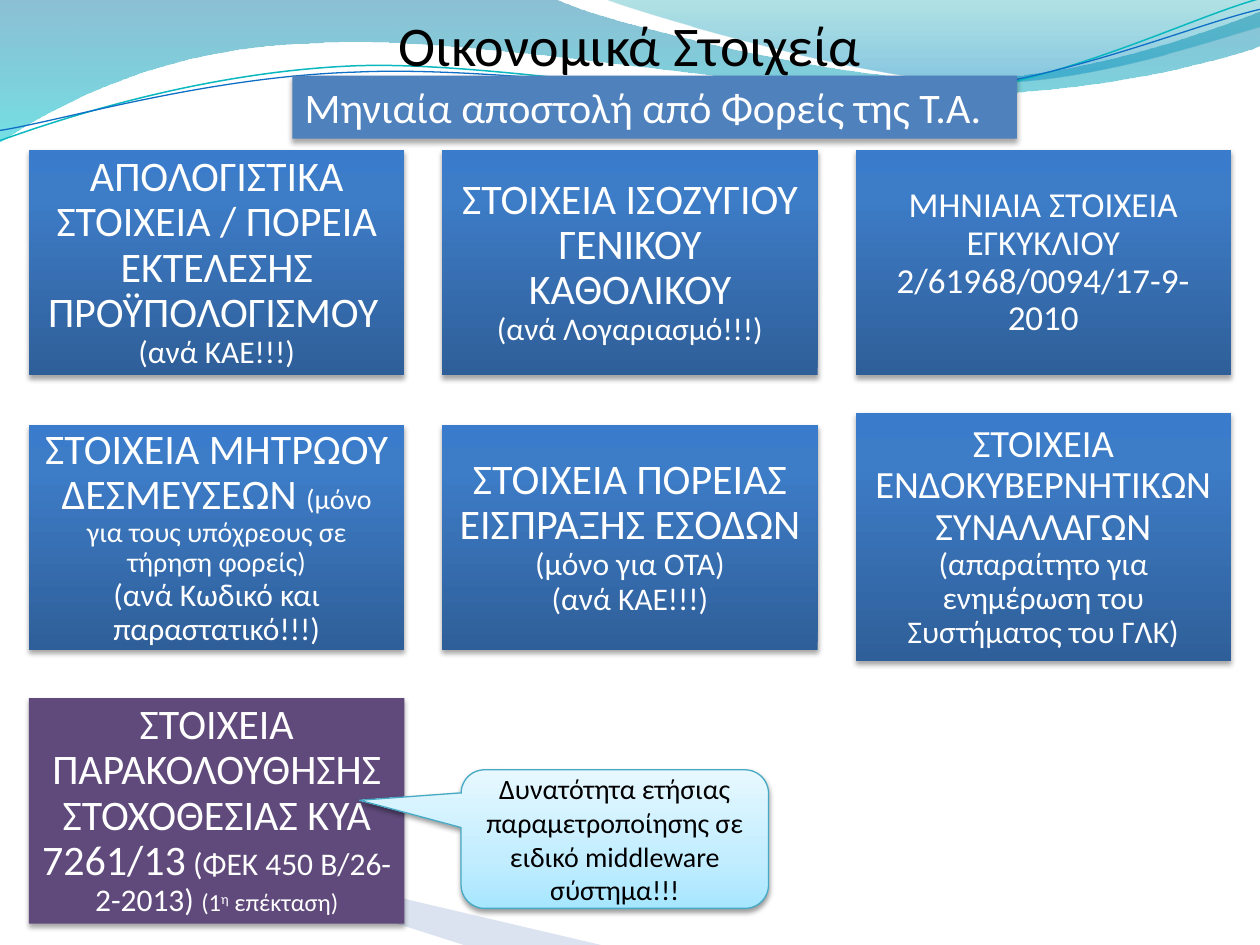
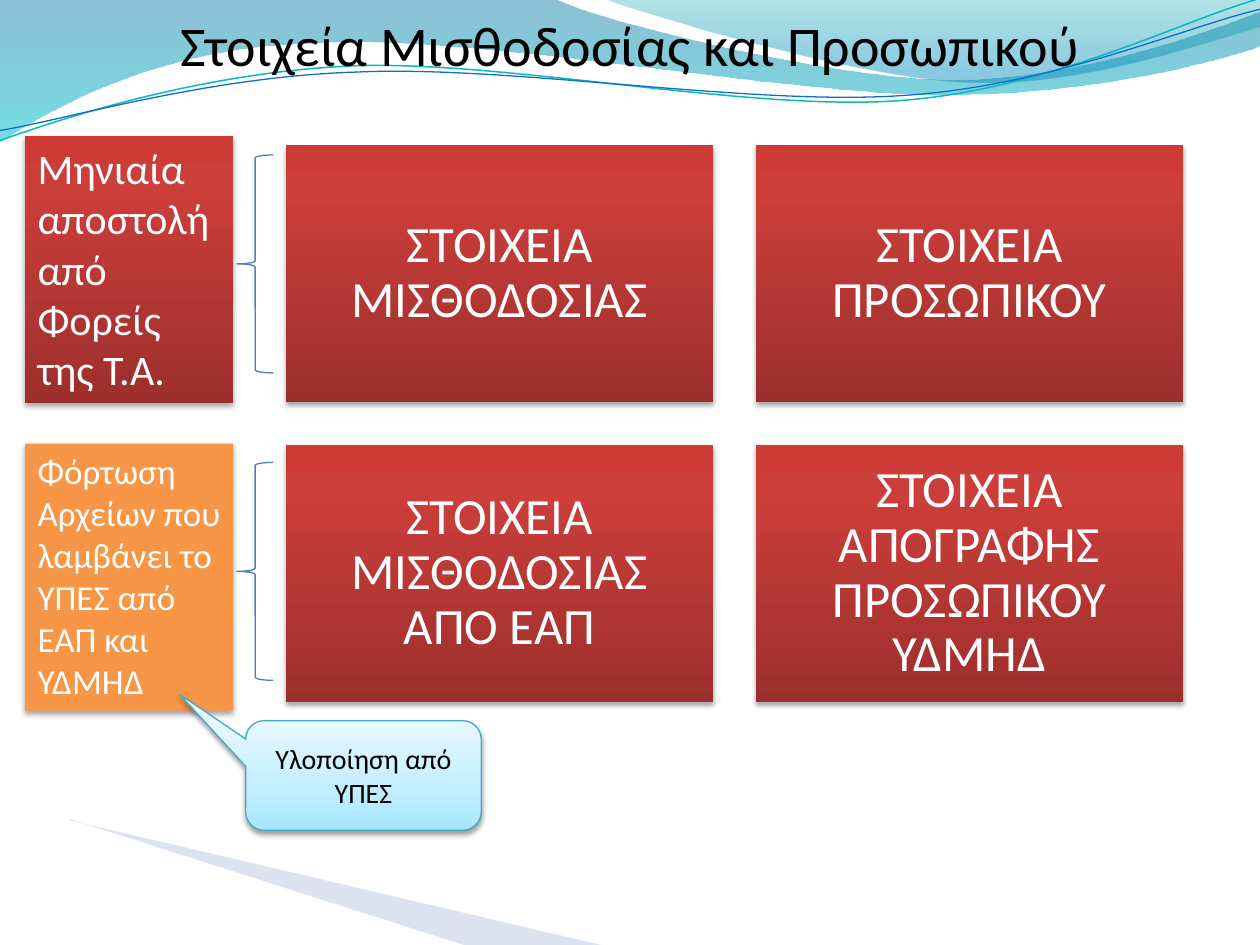
"""Build two slides on the monthly data sent by local government bodies."""
import pptx
import pptx.dml.color
import pptx.enum.shapes
import pptx.enum.text
import pptx.oxml
import pptx.oxml.ns
import pptx.util

Inches, Pt = pptx.util.Inches, pptx.util.Pt
RGB = pptx.dml.color.RGBColor.from_string
Kind = pptx.enum.shapes.MSO_SHAPE
Align = pptx.enum.text.PP_ALIGN
Anchor = pptx.enum.text.MSO_ANCHOR
NS = pptx.oxml.ns.nsdecls("a")
qn = pptx.oxml.ns.qn


class Theme:
    font = "Calibri"
    black, white = "000000", "FFFFFF"
    blue = [(0, "2F5F99", 100), (80, "3D7CC7", 100), (100, "3A7CCB", 100)]
    red = [(0, "9C2F2D", 100), (80, "CB3E3A", 100), (100, "CE3B37", 100)]
    pale = [(0, "A7E6FF", 100), (35, "C1EDFF", 100), (100, "E7F8FF", 100)]
    purple = [(0, "604A7B", 100)]
    orange = [(0, "F79646", 100)]
    flat = [(0, "4F81BD", 100)]
    deep = [(0, "0074A1", 45), (100, "00C6CF", 55)]
    teal = [(0, "00A1A9", 30), (80, "008BBF", 45)]
    wedge = [(0, "A7B9DB", 40)]
    rim, brace, aqua, navy = "46AAC5", "4B7EBC", "0AB8BF", "0F6FC6"
    title, huge, large, mid, body, note, small, tiny = 32, 29, 24, 22, 20, 18, 16, 14


def paint(shape, fill=None, turn=270, line=None, width=0.75, shade=0):
    shape.shadow.inherit = False
    props = shape._element.spPr
    if fill:
        stops = []
        for _, hue, clear in fill:
            alpha = f'<a:alpha val="{clear * 1000}"/>' if clear < 100 else ""
            stops.append(f'<a:srgbClr val="{hue}">{alpha}</a:srgbClr>')
        if len(fill) == 1:
            xml = f"<a:solidFill {NS}>{stops[0]}</a:solidFill>"
        else:
            marks = "".join(f'<a:gs pos="{stop[0] * 1000}">{hue}</a:gs>'
                            for stop, hue in zip(fill, stops))
            xml = (f'<a:gradFill {NS} rotWithShape="1"><a:gsLst>{marks}</a:gsLst>'
                   f'<a:lin ang="{turn * 60000}" scaled="0"/></a:gradFill>')
        shape.fill.solid()
        props.replace(props.find(qn("a:solidFill")), pptx.oxml.parse_xml(xml))
    else:
        shape.fill.background()
    if line:
        shape.line.color.rgb = RGB(line)
        shape.line.width = Pt(width)
    else:
        shape.line.fill.background()
    if shade:
        props.find(qn("a:effectLst")).append(pptx.oxml.parse_xml(
            f'<a:outerShdw {NS} blurRad="{Pt(3.1)}" dist="{Pt(1.8)}" dir="5400000" '
            f'rotWithShape="0"><a:srgbClr val="{Theme.black}">'
            f'<a:alpha val="{shade * 1000}"/></a:srgbClr></a:outerShdw>'))


def write(slide, spot, runs, kind=Kind.RECTANGLE, color=Theme.white, align=Align.CENTER,
          anchor=Anchor.MIDDLE, inset=(0.1, 0.05), space=None, bends=(), **look):
    area = [Inches(v) for v in spot]
    if kind is None:
        shape = slide.shapes.add_textbox(*area)
    else:
        shape = slide.shapes.add_shape(kind, *area)
        for i, bend in enumerate(bends):
            shape.adjustments[i] = bend
        paint(shape, **look)
    frame = shape.text_frame
    frame.word_wrap = True
    frame.vertical_anchor = anchor
    frame.margin_left = frame.margin_right = Inches(inset[0])
    frame.margin_top = frame.margin_bottom = Inches(inset[1])
    para = frame.paragraphs[0]
    para.alignment = align
    if space:
        para.line_spacing = space
    for text, size, *lift in runs:
        for i, part in enumerate(text.split("\n")):
            if i:
                para.add_line_break()
            if part:
                run = para.add_run()
                run.text = part
                run.font.name = Theme.font
                run.font.size = Pt(size)
                run.font.color.rgb = RGB(color)
                if lift:
                    run.font._element.set("baseline", str(lift[0] * 1000))


deck = pptx.Presentation()
deck.slide_width, deck.slide_height = Inches(10), Inches(7.5)

tilt = 357.3
waves = [
    ([(0, 0), (4.4, -0.01), (4.76, 0.17, 6.64, 0.63, 7.58, 0.63),
      (8.53, 0.63, 9.58, 0.26, 10, 0.09), (10.01, 0.36),
      (9.83, 0.44, 8.7, 0.76, 7.46, 0.75), (6.22, 0.75, 3.82, 0.28, 2.57, 0.34),
      (1.29, 0.36, 0.46, 0.83, -0.01, 1.13), (0, 0)], 0, dict(fill=Theme.deep, turn=90)),
    ([(4.79, -0.01), (5.09, 0.11, 6.82, 0.62, 7.69, 0.65),
      (8.56, 0.69, 9.61, 0.32, 10, 0.21), (10, 0), (4.79, -0.01)], 0,
     dict(fill=Theme.teal, turn=90)),
    ([(-0.02, 0.88), (0.47, 0.73, 1.58, 0.42, 2.78, 0.42), (3.96, 0.42, 5.91, 0.93, 7.12, 0.9),
      (8.32, 0.87, 9.4, 0.37, 10, 0.23)], tilt, dict(line=Theme.aqua, width=0.85)),
    ([(-0.02, 0.8), (0.46, 0.75, 1.64, 0.45, 2.83, 0.47), (4.04, 0.47, 5.96, 0.89, 7.16, 0.86),
      (8.35, 0.84, 9.42, 0.42, 10.02, 0.31)], tilt, dict(line=Theme.navy)),
    ([(0.55, 6.51), (4.77, 7.5), (3.68, 7.5), (0.55, 6.5)], 0, dict(fill=Theme.wedge)),
]
slides = []
for title in ("Οικονομικά Στοιχεία", "Στοιχεία Μισθοδοσίας και Προσωπικού"):
    slide = deck.slides.add_slide(deck.slide_layouts[6])
    for parts, spin, look in waves:
        dots = [(Inches(part[i]), Inches(part[i + 1]))
                for part in parts for i in range(0, len(part), 2)]
        pen = slide.shapes.build_freeform(*dots[0], scale=1.0)
        pen.add_line_segments(dots[1:], close=turn if (turn := "fill" in look) else False)
        wave = pen.convert_to_shape()
        legs = iter(list(wave._element.spPr.iter(qn("a:lnTo"))))
        for part in parts[1:]:
            leg = next(legs)
            if len(part) == 6:
                curve = pptx.oxml.parse_xml(f"<a:cubicBezTo {NS}/>")
                leg.addprevious(curve)
                for piece in (leg, next(legs), next(legs)):
                    curve.append(piece[0])
                    piece.getparent().remove(piece)
        wave.rotation = spin
        paint(wave, **look)
    write(slide, (0, 0, 10, 0.7), [(title, Theme.title)], kind=None, color=Theme.black)
    slides.append(slide)
money, staff = slides

cards = [
    [("ΑΠΟΛΟΓΙΣΤΙΚΑ ΣΤΟΙΧΕΙΑ / ΠΟΡΕΙΑ ΕΚΤΕΛΕΣΗΣ ΠΡΟΫΠΟΛΟΓΙΣΜΟΥ", Theme.large),
     (" \n(ανά ΚΑΕ!!!)", Theme.note)],
    [("ΣΤΟΙΧΕΙΑ ΙΣΟΖΥΓΙΟΥ ΓΕΝΙΚΟΥ ΚΑΘΟΛΙΚΟΥ\n", Theme.large),
     ("(ανά Λογαριασμό!!!)", Theme.note)],
    [("ΜΗΝΙΑΙΑ ΣΤΟΙΧΕΙΑ ΕΓΚΥΚΛΙΟΥ 2/61968/0094/17-9-2010", Theme.body)],
    [("ΣΤΟΙΧΕΙΑ ΜΗΤΡΩΟΥ ΔΕΣΜΕΥΣΕΩΝ ", Theme.large),
     ("(μόνο για τους υπόχρεους σε τήρηση φορείς)\n", Theme.small),
     ("(ανά Κωδικό και παραστατικό!!!)", Theme.note)],
    [("ΣΤΟΙΧΕΙΑ ΠΟΡΕΙΑΣ ΕΙΣΠΡΑΞΗΣ ΕΣΟΔΩΝ ", Theme.large),
     ("(μόνο για ΟΤΑ)\n(ανά ΚΑΕ!!!)", Theme.note)],
    [("ΣΤΟΙΧΕΙΑ ΕΝΔΟΚΥΒΕΡΝΗΤΙΚΩΝ ΣΥΝΑΛΛΑΓΩΝ ", Theme.mid),
     ("(απαραίτητο για ενημέρωση του Συστήματος του ΓΛΚ)", Theme.note)],
    [("ΣΤΟΙΧΕΙΑ ΠΑΡΑΚΟΛΟΥΘΗΣΗΣ ΣΤΟΧΟΘΕΣΙΑΣ ΚΥΑ 7261/13", Theme.large),
     (" (ΦΕΚ 450 Β/26-2-2013) ", Theme.note), ("(1", Theme.tiny),
     ("η", Theme.tiny, 30), (" επέκταση)", Theme.tiny)],
]
tops = (1.19, 3.37, 5.54)
for i, runs in enumerate(cards):
    row, col = divmod(i, 3)
    tall = 1.97 if i == 5 else 1.79
    pad = round(runs[0][1] / 240, 2)
    write(money, (0.23 + 3.28 * col, tops[row] - (tall - 1.79) / 2, 2.98, tall), runs,
          inset=(pad, pad), space=0.9, fill=Theme.purple if row == 2 else Theme.blue, shade=35)

monthly = [("Μηνιαία αποστολή από Φορείς της Τ.Α.", Theme.large)]
label = dict(align=Align.LEFT, anchor=Anchor.TOP, shade=35)
bubble = dict(kind=Kind.ROUNDED_RECTANGULAR_CALLOUT, color=Theme.black, fill=Theme.pale,
              line=Theme.rim, shade=38)
write(money, (3.66, 6.11, 2.44, 1.1),
      [("Δυνατότητα ετήσιας παραμετροποίησης σε ειδικό middleware σύστημα!!!", Theme.small)],
      bends=(-0.83, -0.28, 0.17), **bubble)
write(money, (2.32, 0.6, 5.75, 0.5), monthly, fill=Theme.flat, **label)

blocks = ["ΣΤΟΙΧΕΙΑ ΜΙΣΘΟΔΟΣΙΑΣ", "ΣΤΟΙΧΕΙΑ ΠΡΟΣΩΠΙΚΟΥ",
          "ΣΤΟΙΧΕΙΑ ΜΙΣΘΟΔΟΣΙΑΣ ΑΠΟ ΕΑΠ", "ΣΤΟΙΧΕΙΑ ΑΠΟΓΡΑΦΗΣ ΠΡΟΣΩΠΙΚΟΥ ΥΔΜΗΔ"]
for i, text in enumerate(blocks):
    row, col = divmod(i, 2)
    write(staff, (2.27 + 3.73 * col, 1.15 + 2.38 * row, 3.39, 2.04), [(text, Theme.huge)],
          inset=(0.12, 0.12), space=0.9, fill=Theme.red, shade=35)

load = [("Φόρτωση Αρχείων που λαμβάνει το ΥΠΕΣ από ΕΑΠ και ΥΔΜΗΔ", Theme.body)]
for row, (runs, fill) in enumerate([(monthly, Theme.red), (load, Theme.orange)]):
    drop = 2.44 * row
    write(staff, (0.2, 1.08 + drop, 1.65, 2.12), runs, fill=fill, **label)
    write(staff, (1.88, 1.23 + drop, 0.29, 1.73), [], kind=Kind.LEFT_BRACE, line=Theme.brace)
write(staff, (1.95, 5.72, 1.87, 0.87), [("Υλοποίηση από ΥΠΕΣ", Theme.small)],
      bends=(-0.78, -0.74, 0.17), **bubble)

deck.save("out.pptx")
